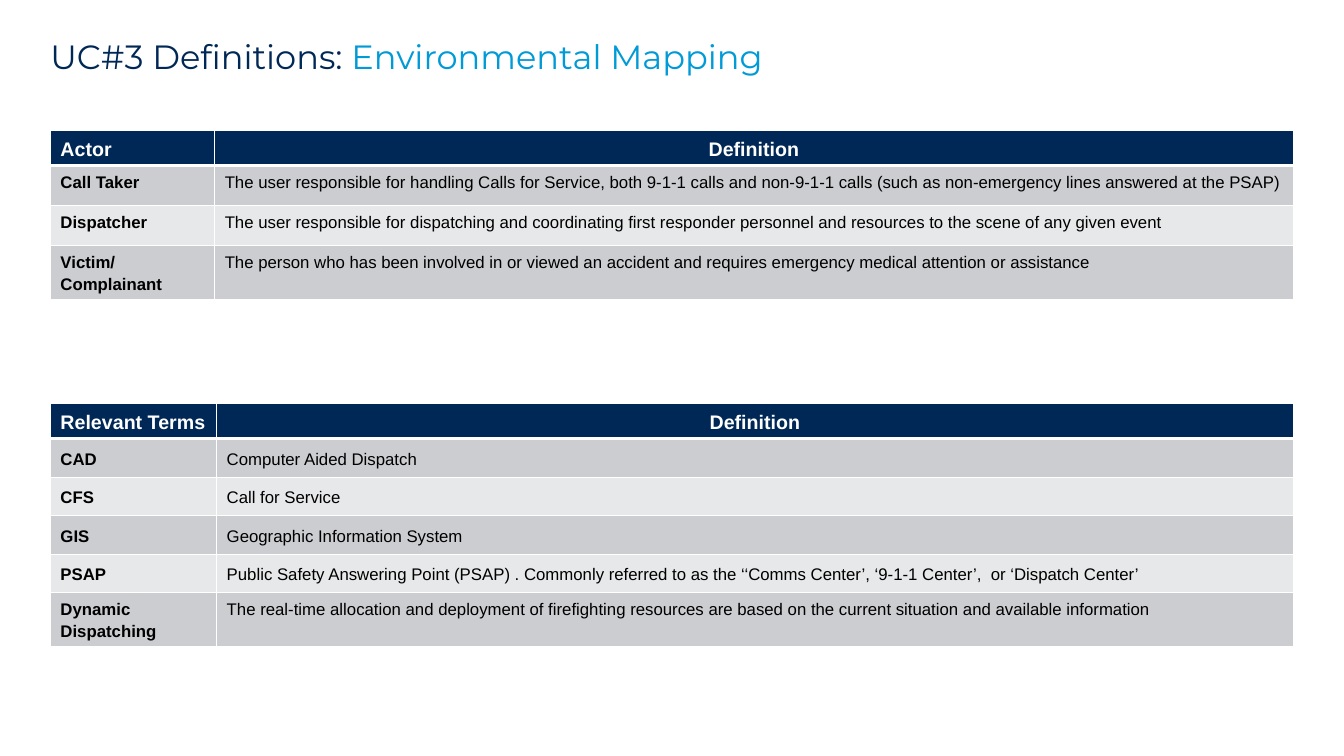
"""Build the slide of actor and term definitions for environmental mapping."""
from lxml.etree import SubElement
from pptx import Presentation
from pptx.dml.color import RGBColor
from pptx.enum.text import MSO_ANCHOR, MSO_AUTO_SIZE, PP_ALIGN
from pptx.oxml.ns import qn
from pptx.util import Cm, Pt

NAVY, BLUE, WHITE, BLACK = "002856", "009AD7", "FFFFFF", "000000"
BANDS = ["CCCDD1", "E7E8E9"]
LEFT, WIDTH = 1.27, 31.32

TITLE = [("UC#3 Definitions: ", NAVY), ("Environmental Mapping", BLUE)]
TABLES = [
    {
        "top": 3.28,
        "first_column": 4.14,
        "heights": [0.89, 1.01, 1.01, 1.36],
        "middle_rows": 1,
        "rows": [
            ("Actor", "Definition"),
            ("Call Taker", "The user responsible for handling Calls for Service, both 9-1-1 calls "
             "and non-9-1-1 calls (such as non-emergency lines answered at the PSAP)"),
            ("Dispatcher", "The user responsible for dispatching and coordinating first responder "
             "personnel and resources to the scene of any given event"),
            ("Victim/ Complainant", "The person who has been involved in or viewed an accident "
             "and requires emergency medical attention or assistance"),
        ],
    },
    {
        "top": 10.16,
        "first_column": 4.19,
        "heights": [0.89, 0.97, 0.97, 0.97, 0.97, 1.35],
        "middle_rows": 5,
        "rows": [
            ("Relevant Terms", "Definition"),
            ("CAD", "Computer Aided Dispatch"),
            ("CFS", "Call for Service"),
            ("GIS", "Geographic Information System"),
            ("PSAP", "Public Safety Answering Point (PSAP) . Commonly referred to as the "
             "‘‘Comms Center’, ‘9-1-1 Center’,  or ‘Dispatch Center’"),
            ("Dynamic Dispatching", "The real-time allocation and deployment of firefighting "
             "resources are based on the current situation and available information"),
        ],
    },
]


def color(value):
    return RGBColor.from_string(value)


def add_text(paragraph, text, font="Arial", size=12, fill=BLACK, bold=False,
             align=PP_ALIGN.LEFT, spacing=1.15):
    paragraph.alignment = align
    paragraph.line_spacing = spacing
    run = paragraph.add_run()
    run.text = text
    run.font.name = font
    run.font.size = Pt(size)
    run.font.bold = bold
    run.font.color.rgb = color(fill)


def set_borders(cell, top, bottom):
    properties = cell._tc.get_or_add_tcPr()
    for side, points in (("L", 1), ("R", 1), ("T", top), ("B", bottom)):
        line = SubElement(properties, qn(f"a:ln{side}"), w=str(Pt(points)))
        SubElement(SubElement(line, qn("a:solidFill")), qn("a:srgbClr"), val=WHITE)


def add_definitions(slide, content):
    rows = content["rows"]
    table = slide.shapes.add_table(len(rows), 2, Cm(LEFT), Cm(content["top"]), Cm(WIDTH),
                                   Cm(sum(content["heights"]))).table
    table.columns[0].width = Cm(content["first_column"])
    table.columns[1].width = Cm(WIDTH - content["first_column"])
    for row, texts in enumerate(rows):
        table.rows[row].height = Cm(content["heights"][row])
        header = row == 0
        for column, text in enumerate(texts):
            cell = table.cell(row, column)
            set_borders(cell, top=3 if row == 1 else 1, bottom=3 if header else 1)
            cell.fill.solid()
            cell.fill.fore_color.rgb = color(NAVY if header else BANDS[(row - 1) % 2])
            middle = row < content["middle_rows"]
            cell.vertical_anchor = MSO_ANCHOR.MIDDLE if middle else MSO_ANCHOR.TOP
            add_text(cell.text_frame.paragraphs[0], text,
                     size=14 if header else 12,
                     fill=WHITE if header else BLACK,
                     bold=header or column == 0,
                     align=PP_ALIGN.CENTER if header and column == 1 else PP_ALIGN.LEFT)


def add_title(slide):
    title = slide.shapes.title
    title.left, title.top, title.width, title.height = Cm(LEFT), Cm(1.02), Cm(WIDTH), Cm(1.22)
    frame = title.text_frame
    frame.margin_left = frame.margin_top = frame.margin_right = frame.margin_bottom = 0
    frame.vertical_anchor = MSO_ANCHOR.TOP
    frame.auto_size = MSO_AUTO_SIZE.NONE
    frame.word_wrap = True
    for text, fill in TITLE:
        add_text(frame.paragraphs[0], text, font="Montserrat", size=24, fill=fill, spacing=0.9)


def main():
    presentation = Presentation()
    presentation.slide_width, presentation.slide_height = Cm(33.87), Cm(19.05)
    slide = presentation.slides.add_slide(presentation.slide_layouts[5])
    add_title(slide)
    for content in TABLES:
        add_definitions(slide, content)
    presentation.save("out.pptx")


if __name__ == "__main__":
    main()
